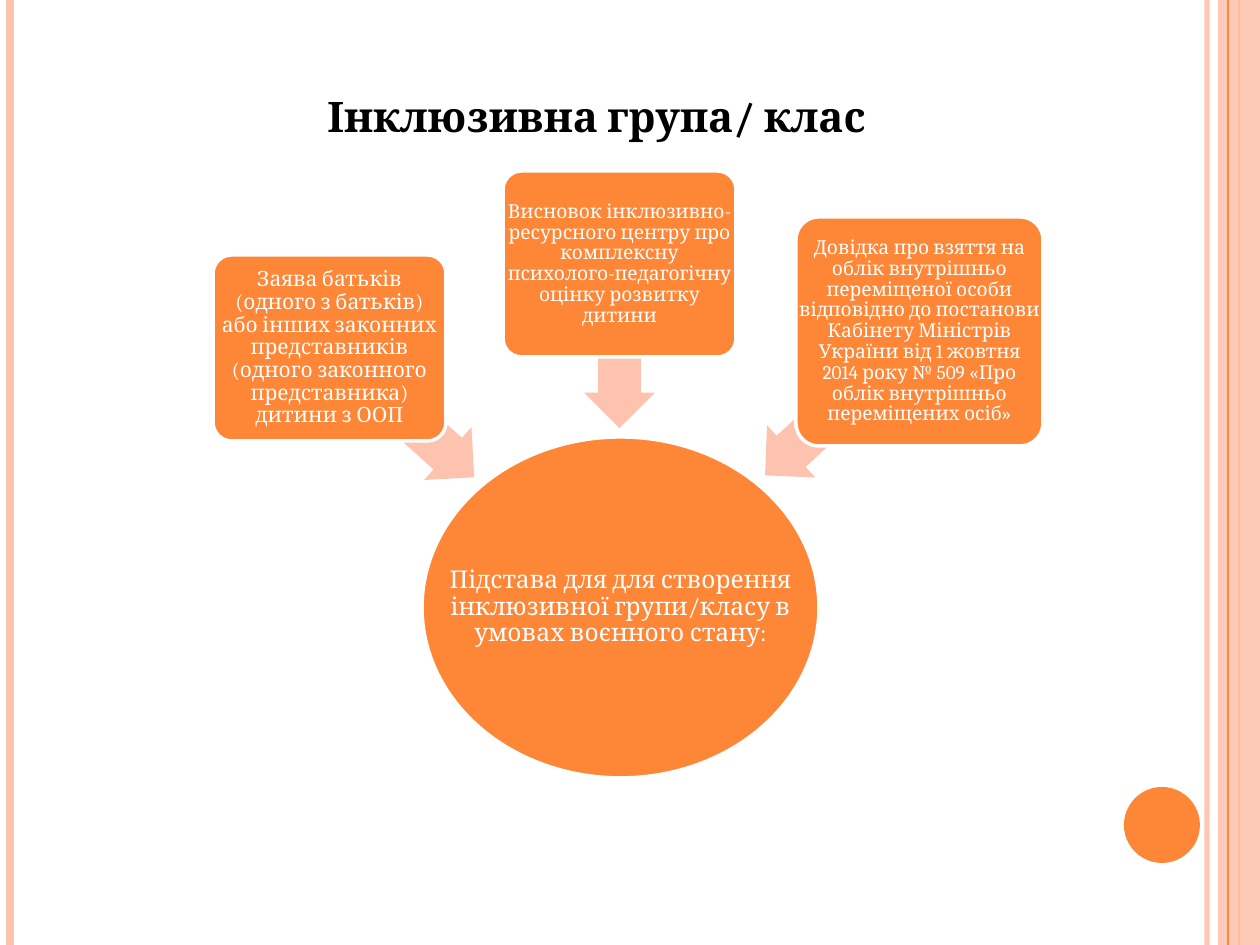
from pptx import Presentation
from pptx.dml.color import RGBColor
from pptx.enum.shapes import MSO_CONNECTOR, MSO_SHAPE as SHP
from pptx.enum.text import MSO_ANCHOR, PP_ALIGN
from pptx.oxml.ns import qn
from pptx.util import Pt
from lxml.etree import SubElement

PX = 914400 / 126
W, H = 1260, 945
ORANGE, PEACH, WHITE, BLACK = "FE8637", "FEC3AE", "FFFFFF", "000000"
FONT = "Cambria"

OUTER_LINES = [(1207, PEACH, 3, 93), (10, PEACH, 4.5, 100), (1239, ORANGE, 1.5, 100)]
INNER_LINE = (1228, ORANGE, 0.75, 100)
BAND = (1218, 0, 42, H)
DOT = (1124, 787, 76, 76)

TITLE = "Інклюзивна група/ клас"
TITLE_BOX = (315, 84, 630, 63)
HUB = ("Підстава для для створення інклюзивної групи/класу в умовах воєнного стану:",
       (422, 437, 397, 341), 14, 1)
GROUNDS = [
    ("Заява батьків (одного з батьків) або інших законних представників "
     "(одного законного представника) дитини з ООП",
     (213, 255, 233, 186), 12, 4, (305, 377, 194, 71), 221.9),
    ("Висновок інклюзивно-ресурсного центру про комплексну "
     "психолого-педагогічну оцінку розвитку дитини",
     (503, 171, 233, 186), 11, 3, (538, 311, 163, 71), 270),
    ("Довідка про взяття на облік внутрішньо переміщеної особи відповідно до "
     "постанови Кабінету Міністрів України від 1 жовтня 2014 року № 509 "
     "«Про облік внутрішньо переміщених осіб»",
     (796, 217, 247, 229), 11, 3, (737, 368, 212, 71), 317.3),
]


def emu(*lengths):
    return [round(n * PX) for n in lengths]


def rgb(color):
    return RGBColor.from_string(color)


def set_alpha(fill, percent):
    color = next(fill.iter(qn("a:srgbClr")))
    SubElement(color, qn("a:alpha")).set("val", str(percent * 1000))


def add_rule(s, x, color, width, alpha):
    line = s.shapes.add_connector(MSO_CONNECTOR.STRAIGHT, *emu(x, 0, x, H))
    line.line.color.rgb = rgb(color)
    line.line.width = Pt(width)
    sp_pr = line._element.spPr
    if alpha < 100:
        set_alpha(sp_pr, alpha)
    SubElement(sp_pr, qn("a:effectLst"))


def add_shape(s, kind, box, color, outlined=False, adj=()):
    sp = s.shapes.add_shape(kind, *emu(*box))
    sp.shadow.inherit = False
    sp.fill.solid()
    sp.fill.fore_color.rgb = rgb(color)
    if outlined:
        sp.line.color.rgb = rgb(WHITE)
        sp.line.width = Pt(2)
    else:
        sp.line.fill.background()
    for i, value in enumerate(adj):
        sp.adjustments[i] = value
    return sp


def add_text(s, text, box, size, color, bold=False):
    tf = s.shapes.add_textbox(*emu(*box)).text_frame
    tf.word_wrap = True
    p = tf.paragraphs[0]
    p.text = text
    p.font.name = FONT
    p.font.size = Pt(size)
    p.font.bold = bold
    p.font.color.rgb = rgb(color)
    return tf


def add_label(s, text, box, size, inset):
    tf = add_text(s, text, box, size, WHITE)
    tf.vertical_anchor = MSO_ANCHOR.MIDDLE
    tf.margin_left = tf.margin_right = tf.margin_top = tf.margin_bottom = emu(inset)[0]
    tf.paragraphs[0].alignment = PP_ALIGN.CENTER
    tf.paragraphs[0].line_spacing = 0.9


def main():
    prs = Presentation()
    prs.slide_width, prs.slide_height = emu(W, H)
    s = prs.slides.add_slide(prs.slide_layouts[6])

    for rule in OUTER_LINES:
        add_rule(s, *rule)
    band = add_shape(s, SHP.RECTANGLE, BAND, PEACH)
    set_alpha(band._element.spPr, 87)
    add_rule(s, *INNER_LINE)
    add_shape(s, SHP.OVAL, DOT, ORANGE)

    add_text(s, TITLE, TITLE_BOX, 24, BLACK, bold=True)
    text, box, size, inset = HUB
    add_shape(s, SHP.OVAL, box, ORANGE, outlined=True)
    add_label(s, text, box, size, inset)
    for text, box, size, inset, arrow_box, angle in GROUNDS:
        arrow = add_shape(s, SHP.LEFT_ARROW, arrow_box, PEACH, adj=(0.6, 0.5))
        arrow.rotation = angle
        add_shape(s, SHP.ROUNDED_RECTANGLE, box, ORANGE, outlined=True, adj=(0.1,))
        add_label(s, text, box, size, inset)

    prs.save("out.pptx")


if __name__ == "__main__":
    main()
